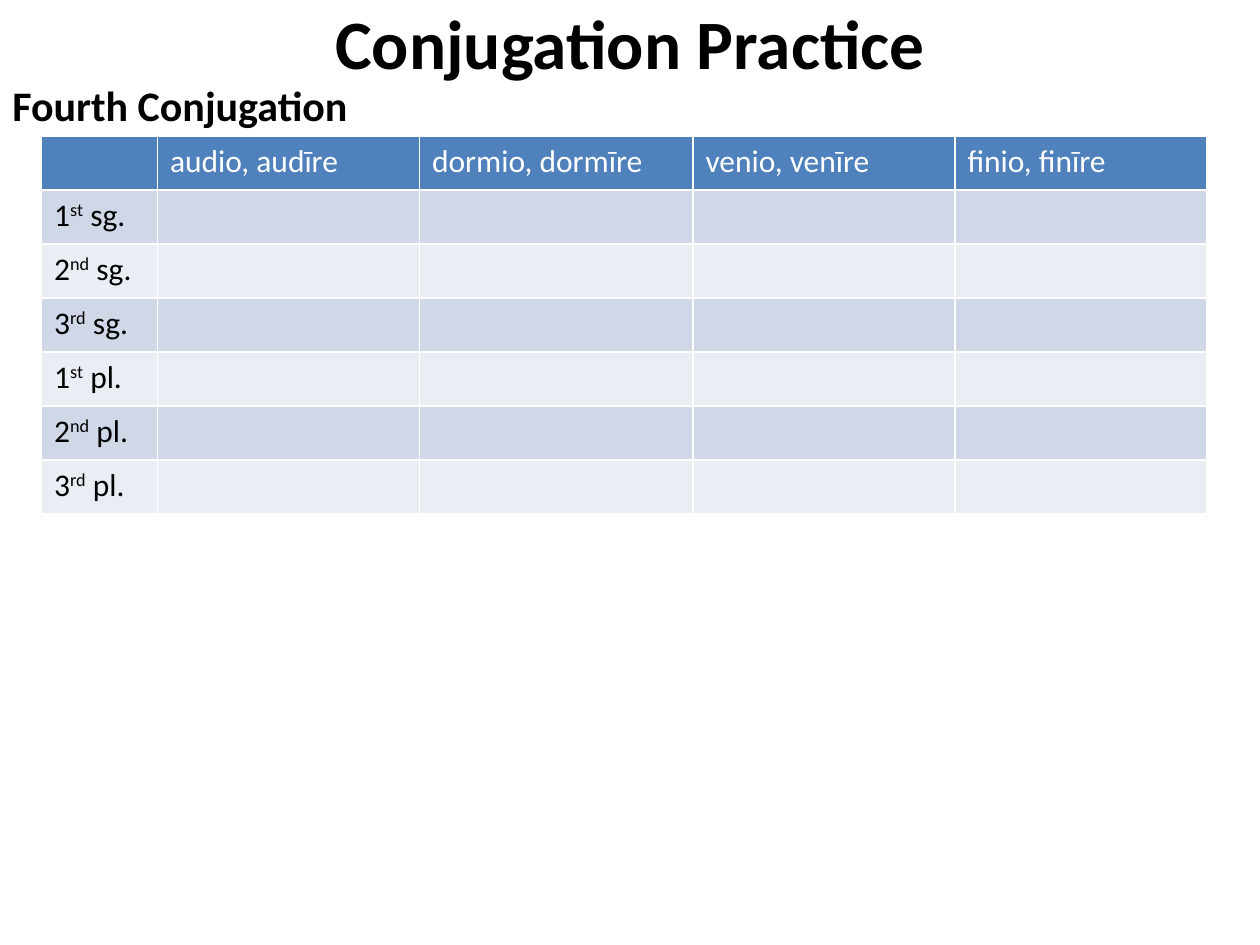
from pptx import Presentation
from pptx import util as u
from pptx.dml.color import RGBColor
from pptx.enum import text

BLACK = RGBColor(0x00, 0x00, 0x00)
WHITE = RGBColor(0xFF, 0xFF, 0xFF)
HEADER_BLUE = RGBColor(0x4F, 0x81, 0xBD)
BANDS = (RGBColor(0xD0, 0xD8, 0xE8), RGBColor(0xE9, 0xED, 0xF4))

VERBS = ["audio, audīre", "dormio, dormīre", "venio, venīre", "finio, finīre"]
ORDINALS = [("1", "st"), ("2", "nd"), ("3", "rd")]
NUMBERS = ["sg.", "pl."]
COLUMN_WIDTHS = [0.92, 2.08, 2.17, 2.08, 2]
ROW_HEIGHT = 3 / 7


class SlideBuilder:
    font_name = "Calibri"
    table_size = 18

    def __init__(self, slide):
        self.slide = slide

    def style(self, paragraph, size, color, bold=False):
        for run in paragraph.runs:
            run.font.name = self.font_name
            run.font.size = u.Pt(size)
            run.font.bold = bold
            run.font.color.rgb = color

    def text_box(self, words, left, top, width, height, size, align, anchor):
        shape = self.slide.shapes.add_textbox(
            u.Inches(left), u.Inches(top), u.Inches(width), u.Inches(height))
        frame = shape.text_frame
        frame.word_wrap = True
        frame.vertical_anchor = anchor
        frame.text = words
        paragraph = frame.paragraphs[0]
        paragraph.alignment = align
        self.style(paragraph, size, BLACK, bold=True)

    def table(self, left, top, row_count):
        shape = self.slide.shapes.add_table(
            row_count, len(COLUMN_WIDTHS), u.Inches(left), u.Inches(top),
            u.Inches(sum(COLUMN_WIDTHS)), u.Inches(ROW_HEIGHT * row_count))
        table = shape.table
        for column, width in zip(table.columns, COLUMN_WIDTHS):
            column.width = u.Inches(width)
        for index, row in enumerate(table.rows):
            color = BANDS[(index - 1) % 2] if index else HEADER_BLUE
            for cell in row.cells:
                cell.fill.solid()
                cell.fill.fore_color.rgb = color
        return table

    def header(self, cell, words):
        cell.text = words
        self.style(cell.text_frame.paragraphs[0], self.table_size, WHITE)

    def person_label(self, cell, digit, suffix, number):
        paragraph = cell.text_frame.paragraphs[0]
        for words in (digit, suffix, " " + number):
            paragraph.add_run().text = words
        self.style(paragraph, self.table_size, BLACK)
        paragraph.runs[1].font._element.set("baseline", "30000")


def main():
    presentation = Presentation()
    presentation.slide_width = u.Inches(10)
    presentation.slide_height = u.Inches(7.5)
    builder = SlideBuilder(presentation.slides.add_slide(presentation.slide_layouts[6]))

    builder.text_box("Conjugation Practice", 0.5, 0, 9, 0.67, 39.6,
                     text.PP_ALIGN.CENTER, text.MSO_ANCHOR.MIDDLE)
    builder.text_box("Fourth Conjugation", 0, 0.58, 9.75, 6.92, 24,
                     text.PP_ALIGN.LEFT, text.MSO_ANCHOR.TOP)

    persons = [(digit, suffix, number) for number in NUMBERS for digit, suffix in ORDINALS]
    table = builder.table(0.33, 1.08, len(persons) + 1)
    for column, verb in enumerate(VERBS, start=1):
        builder.header(table.cell(0, column), verb)
    for row, person in enumerate(persons, start=1):
        builder.person_label(table.cell(row, 0), *person)

    presentation.save("out.pptx")


if __name__ == "__main__":
    main()
